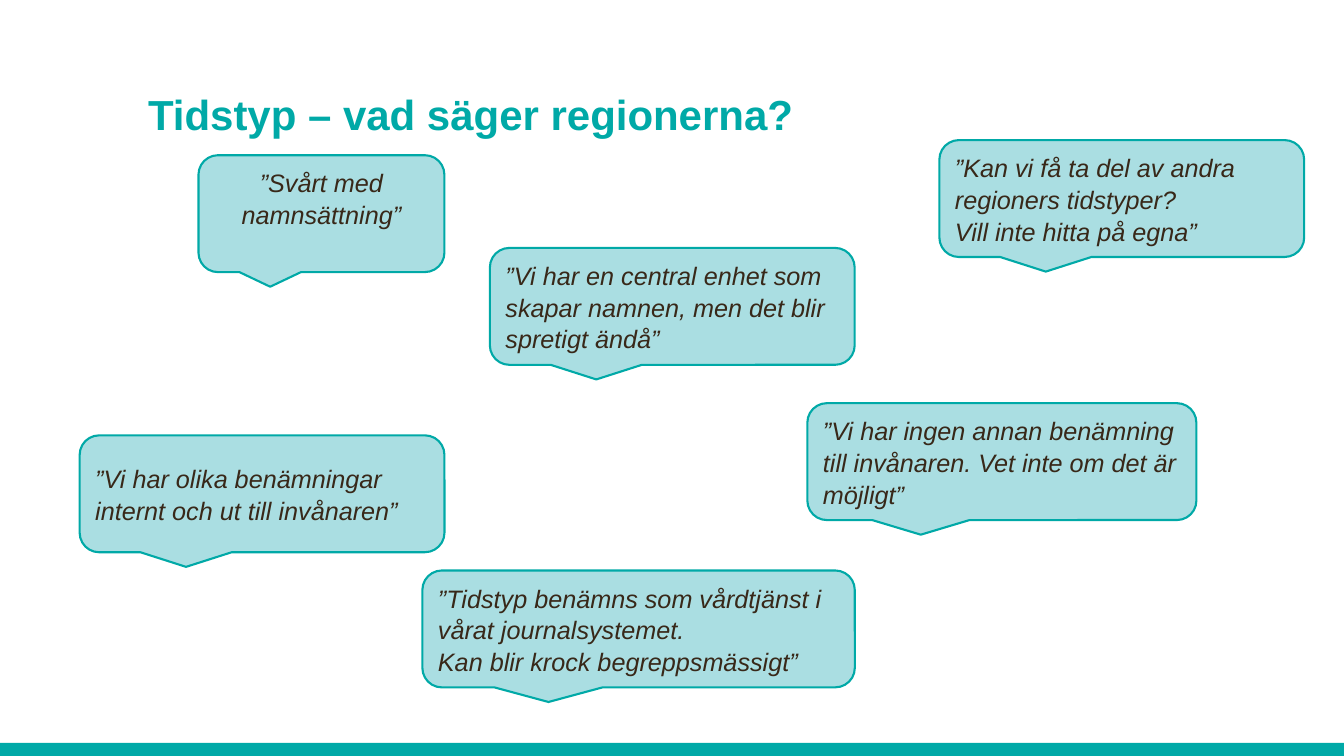
from pptx import Presentation
from pptx.dml.color import RGBColor
from pptx.enum import shapes, text
from pptx.util import Pt

COLORS = {"teal": "00A9A7", "light": "AADEE2", "ink": "382819"}
TITLE_FONT = {"name": "Arial", "size": Pt(30), "bold": True}
QUOTE_FONT = {"name": "Arial", "size": Pt(18), "italic": True}
LEFT, CENTER = text.PP_ALIGN.LEFT, text.PP_ALIGN.CENTER
QUOTE_HEIGHT = 83.5

# left, top, width, alignment, extra space below the text, paragraphs
QUOTES = [
    (141.8, 110.9, 175.7, CENTER, 23, ["”Svårt med namnsättning”"]),
    (349.9, 177.1, 260.6, LEFT, 0,
     ["”Vi har en central enhet som skapar namnen, men det blir spretigt ändå”"]),
    (671, 100.1, 260.6, LEFT, 0,
     ["”Kan vi få ta del av andra regioners tidstyper?", "Vill inte hitta på egna”"]),
    (56.9, 311, 260.6, LEFT, 0,
     ["”Vi har olika benämningar internt och ut till invånaren”"]),
    (576.7, 288, 277.9, LEFT, 0,
     ["”Vi har ingen annan benämning till invånaren. Vet inte om det är möjligt”"]),
    (301.7, 407.5, 308.9, LEFT, 0,
     ["”Tidstyp benämns som vårdtjänst i vårat journalsystemet.",
      "Kan blir krock begreppsmässigt”"]),
]


def rgb(name):
    return RGBColor.from_string(COLORS[name])


def set_attrs(obj, values):
    for name, value in values.items():
        setattr(obj, name, value)


def write(p, words, font, color):
    r = p.add_run()
    r.text = words
    set_attrs(r.font, font)
    r.font.color.rgb = rgb(color)


def add_footer_bar(s, left, top, width, height):
    sp = s.shapes.add_shape(shapes.MSO_SHAPE.RECTANGLE,
                            Pt(left), Pt(top), Pt(width), Pt(height))
    sp.shadow.inherit = False
    sp.fill.solid()
    sp.fill.fore_color.rgb = rgb("teal")
    sp.line.fill.background()


def add_title(s, left, top, width, height, words):
    tf = s.shapes.add_textbox(Pt(left), Pt(top), Pt(width), Pt(height)).text_frame
    set_attrs(tf, {"word_wrap": True, "vertical_anchor": text.MSO_ANCHOR.BOTTOM,
                   "margin_left": 0, "margin_top": 0,
                   "margin_right": 0, "margin_bottom": 0})
    write(tf.paragraphs[0], words, TITLE_FONT, "teal")


def add_quote(s, left, top, width, height, align, space_below, lines):
    sp = s.shapes.add_shape(shapes.MSO_SHAPE.ROUNDED_RECTANGULAR_CALLOUT,
                            Pt(left), Pt(top), Pt(width), Pt(height))
    sp.shadow.inherit = False
    sp.fill.solid()
    sp.fill.fore_color.rgb = rgb("light")
    sp.line.color.rgb = rgb("teal")
    sp.line.width = Pt(1.5)
    tf = sp.text_frame
    set_attrs(tf, {"word_wrap": True, "vertical_anchor": text.MSO_ANCHOR.MIDDLE,
                   "margin_left": Pt(7.2), "margin_right": Pt(7.2),
                   "margin_top": Pt(3.6), "margin_bottom": Pt(3.6 + space_below)})
    for i, line in enumerate(lines):
        p = tf.add_paragraph() if i else tf.paragraphs[0]
        set_attrs(p, {"alignment": align, "line_spacing": 1.05})
        write(p, line, QUOTE_FONT, "ink")


def main():
    prs = Presentation()
    prs.slide_width, prs.slide_height = Pt(960), Pt(540)
    s = prs.slides.add_slide(prs.slide_layouts[6])
    # Frame and heading
    add_footer_bar(s, 0, 530.6, 960, 9.4)
    add_title(s, 105.8, 25.9, 748, 73.5, "Tidstyp – vad säger regionerna?")
    # Speech bubbles
    for left, top, width, align, space_below, lines in QUOTES:
        add_quote(s, left, top, width, QUOTE_HEIGHT, align, space_below, lines)
    prs.save("out.pptx")


if __name__ == "__main__":
    main()
